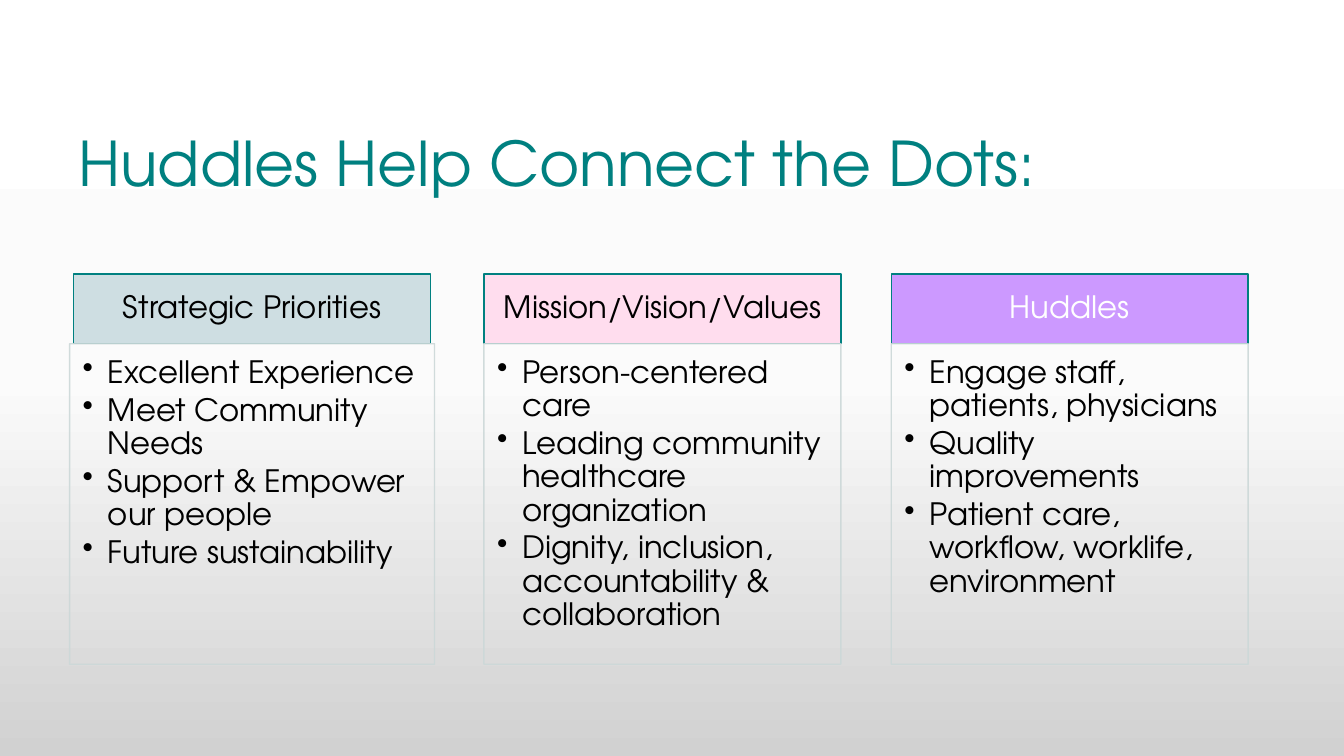
import copy

import lxml.etree
import pptx
import pptx.dml.color
import pptx.enum.shapes
import pptx.enum.text
import pptx.oxml.ns
import pptx.util

Inches = pptx.util.Inches
Pt = pptx.util.Pt
qn = pptx.oxml.ns.qn
ALIGN = pptx.enum.text.PP_ALIGN
ANCHOR = pptx.enum.text.MSO_ANCHOR

FONT = "TeX Gyre Adventor"
TEAL = "008080"
HEADER_HEIGHT = 0.69
BACKGROUND_STOPS = [(0, "FFFFFF"), (0.5, "FBFBFB"), (1, "D1D1D1")]
COLUMNS = [
    ((0.73, 2.72, 3.54, 3.87), 0.04, "Strategic Priorities", "CEDEE2", "000000",
     ["Excellent Experience", "Meet Community Needs",
      "Support & Empower our people", "Future sustainability"]),
    ((4.8, 2.72, 3.54, 3.87), 0, "Mission/Vision/Values", "FFDDEE", "000000",
     ["Person-centered care", "Leading community healthcare organization",
      "Dignity, inclusion, accountability & collaboration"]),
    ((8.84, 2.72, 3.54, 3.87), 0, "Huddles", "CC99FF", "FFFFFF",
     ["Engage staff, patients, physicians", "Quality improvements",
      "Patient care, workflow, worklife, environment"]),
]


def color(value):
    """Return the colour for a hex string."""
    return pptx.dml.color.RGBColor.from_string(value)


def write_text(shape, lines, size=22, text_color="000000", align=ALIGN.LEFT,
               anchor=ANCHOR.TOP, insets=(0.1, 0.05, 0.1, 0.05), bullet=False):
    """Fill a shape with formatted paragraphs."""
    frame = shape.text_frame
    frame.word_wrap = True
    frame.vertical_anchor = anchor
    (frame.margin_left, frame.margin_top,
     frame.margin_right, frame.margin_bottom) = map(Inches, insets)
    for index, line in enumerate(lines):
        paragraph = frame.paragraphs[0] if index == 0 else frame.add_paragraph()
        paragraph.alignment = align
        paragraph.line_spacing = 0.9
        if bullet:
            paragraph.space_after = Pt(3.3)
            properties = paragraph._p.get_or_add_pPr()
            properties.set("marL", str(Inches(0.25)))
            properties.set("indent", str(Inches(-0.25)))
            lxml.etree.SubElement(properties, qn("a:buChar")).set("char", "•")
        run = paragraph.add_run()
        run.text = line
        run.font.name = FONT
        run.font.size = Pt(size)
        run.font.color.rgb = color(text_color)


def add_rectangle(slide, box, line_color, fill_color=None):
    """Add an outlined rectangle, unfilled unless a fill is given."""
    shape = slide.shapes.add_shape(
        pptx.enum.shapes.MSO_SHAPE.RECTANGLE, *map(Inches, box))
    shape.shadow.inherit = False
    if fill_color:
        shape.fill.solid()
        shape.fill.fore_color.rgb = color(fill_color)
    else:
        shape.fill.background()
    shape.line.color.rgb = color(line_color)
    shape.line.width = Pt(1)
    return shape


def add_background(slide):
    """Give the slide its vertical grey gradient."""
    fill = slide.background.fill
    fill.gradient()
    fill.gradient_angle = 270
    stop_list = slide.element.find(".//" + qn("a:gsLst"))
    stop_list.append(copy.deepcopy(stop_list[0]))
    for stop, (position, value) in zip(fill.gradient_stops, BACKGROUND_STOPS):
        stop.position = position
        stop.color.rgb = color(value)


def add_title(slide, box, text):
    """Add the slide title."""
    title = slide.shapes.add_textbox(*map(Inches, box))
    write_text(title, [text], size=44, text_color=TEAL)


def add_column(slide, box, overhang, heading, fill_color, heading_color, items):
    """Add a coloured heading above an outlined bullet list."""
    left, top, width, height = box
    header = add_rectangle(slide, (left, top, width, HEADER_HEIGHT), TEAL, fill_color)
    write_text(header, [heading], text_color=heading_color, align=ALIGN.CENTER,
               anchor=ANCHOR.MIDDLE, insets=(0.17, 0.1, 0.17, 0.1))
    body = add_rectangle(
        slide, (left - overhang, top + HEADER_HEIGHT,
                width + 2 * overhang, height - HEADER_HEIGHT), "CCD8D8")
    line_color = body.line._ln.find(".//" + qn("a:srgbClr"))
    lxml.etree.SubElement(line_color, qn("a:alpha")).set("val", "90000")
    write_text(body, items, insets=(0.13, 0.13, 0.17, 0.19), bullet=True)


def main():
    """Build and save the presentation."""
    presentation = pptx.Presentation()
    presentation.slide_width = Inches(13.33)
    presentation.slide_height = Inches(7.5)
    slide = presentation.slides.add_slide(presentation.slide_layouts[6])
    add_background(slide)
    for column in COLUMNS:
        add_column(slide, *column)
    add_title(slide, (0.68, 1.27, 11.5, 1.35), "Huddles Help Connect the Dots:")
    presentation.save("out.pptx")


if __name__ == "__main__":
    main()
